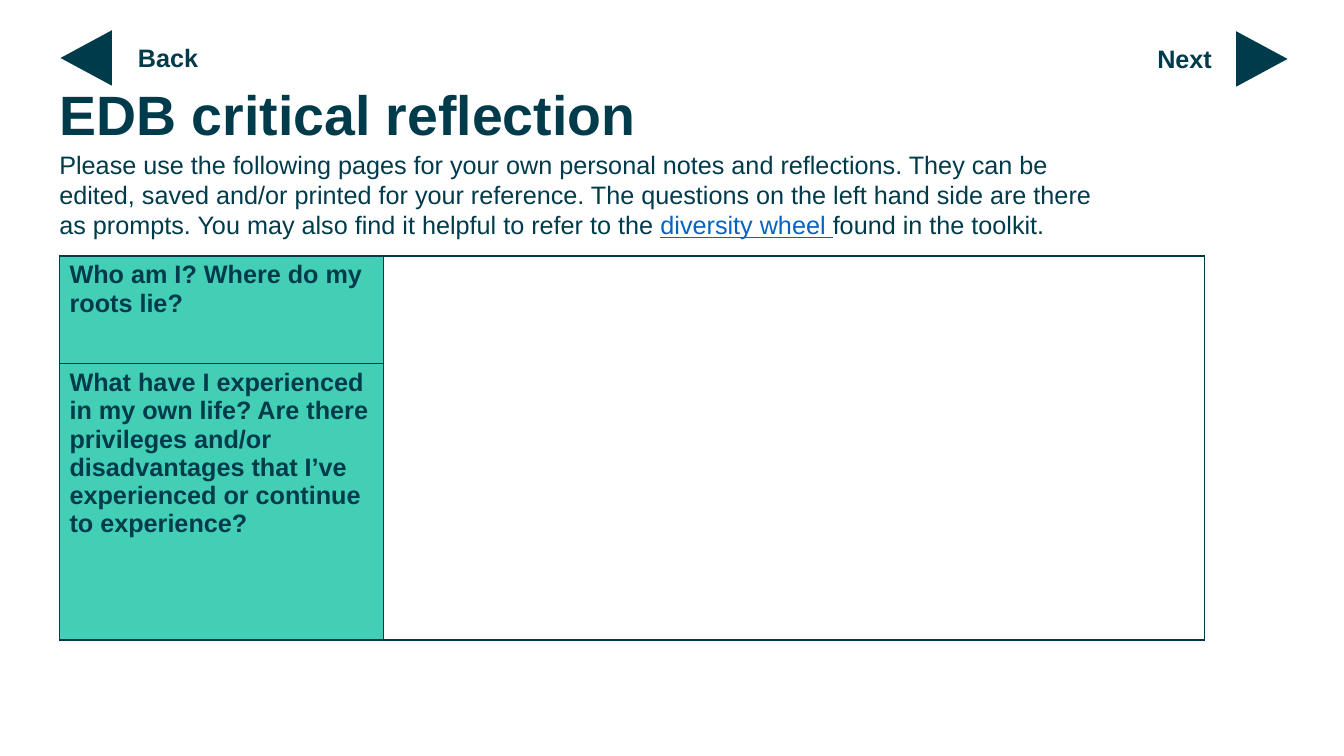
from lxml.etree import SubElement
from pptx import Presentation
from pptx.dml.color import RGBColor
from pptx.enum.shapes import MSO_SHAPE
from pptx.enum.text import MSO_ANCHOR, PP_ALIGN
from pptx.oxml.ns import qn
from pptx.util import Inches, Pt

NAVY = RGBColor(0x00, 0x3B, 0x4C)
TEAL = RGBColor(0x43, 0xCF, 0xB5)
WHITE = RGBColor(0xFF, 0xFF, 0xFF)
BLUE = RGBColor(0x05, 0x63, 0xC1)

BODY = {"name": "Arial", "size": Pt(18), "bold": False}
BOLD = {**BODY, "bold": True}
TITLE = {**BOLD, "size": Pt(39.6)}

INTRO = [
    ("Please use the following pages for your own personal notes and "
     "reflections. They can be edited, saved and/or printed for your "
     "reference. The questions on the left hand side are there as prompts. "
     "You may also find it helpful to refer to the ", NAVY, False),
    ("diversity wheel ", BLUE, True),
    ("found in the toolkit.", NAVY, False),
]
PROMPTS = [
    ("Who am I? Where do my roots lie?", 1.07),
    ("What have I experienced in my own life? Are there privileges and/or "
     "disadvantages that I’ve experienced or continue to experience?", 2.74),
]


def add_run(para, text, style, color=NAVY):
    run = para.add_run()
    run.text = text
    for name, value in style.items():
        setattr(run.font, name, value)
    run.font.color.rgb = color
    return run


def add_box(slide, *box):
    frame = slide.shapes.add_textbox(*map(Inches, box)).text_frame
    frame.word_wrap = True
    return frame.paragraphs[0]


def add_title(slide, text, *box):
    title = slide.shapes.title
    title.left, title.top, title.width, title.height = map(Inches, box)
    frame = title.text_frame
    for side in ("left", "top", "right", "bottom"):
        setattr(frame, f"margin_{side}", 0)
    frame.vertical_anchor = MSO_ANCHOR.TOP
    para = frame.paragraphs[0]
    para.alignment = PP_ALIGN.LEFT
    para.line_spacing = 0.9
    add_run(para, text, TITLE)


def add_intro(slide, *box):
    para = add_box(slide, *box)
    for text, color, under in INTRO:
        add_run(para, text, {**BODY, "underline": under}, color)


def add_nav(slide, label, left, top, turn, gap):
    """Place an arrow at left, top and its label at the given gap from it."""
    arrow = slide.shapes.add_shape(
        MSO_SHAPE.ISOSCELES_TRIANGLE,
        *map(Inches, (left, top, 0.55, 0.51)))
    arrow.rotation = turn
    arrow.shadow.inherit = False
    arrow.fill.solid()
    arrow.fill.fore_color.rgb = NAVY
    arrow.line.fill.background()
    add_run(add_box(slide, left + gap, top + 0.05, 0.84, 0.4), label, BOLD)


def style_cell(cell, color):
    props = cell._tc.get_or_add_tcPr()
    for side in ("lnL", "lnR", "lnT", "lnB"):
        line = SubElement(props, qn(f"a:{side}"), w=str(Pt(1)))
        fill = SubElement(line, qn("a:solidFill"))
        SubElement(fill, qn("a:srgbClr"), val=str(NAVY))
    cell.fill.solid()
    cell.fill.fore_color.rgb = color


def add_notes(slide, left, top, width, height):
    """Add the table of prompts, with one tall cell for the answers."""
    table = slide.shapes.add_table(
        len(PROMPTS), 2, *map(Inches, (left, top, width, height))).table
    table.first_row = table.horz_banding = False
    table.columns[0].width = Inches(3.21)
    table.columns[1].width = Inches(width - 3.21)
    for row, (text, tall) in enumerate(PROMPTS):
        table.rows[row].height = Inches(tall)
        prompt = table.cell(row, 0)
        add_run(prompt.text_frame.paragraphs[0], text, BOLD)
        style_cell(prompt, TEAL)
        style_cell(table.cell(row, 1), WHITE)
    table.cell(0, 1).merge(table.cell(len(PROMPTS) - 1, 1))


def main():
    deck = Presentation()
    deck.slide_width, deck.slide_height = Inches(13.33), Inches(7.5)
    slide = deck.slides.add_slide(deck.slide_layouts[5])
    add_title(slide, "EDB critical reflection", 0.59, 0.87, 11.22, 0.79)
    add_notes(slide, 0.59, 2.54, 11.36, 3.81)
    add_intro(slide, 0.49, 1.43, 10.72, 1.01)
    add_nav(slide, "Next", 12.24, 0.33, 90, -0.86)
    add_nav(slide, "Back", 0.58, 0.32, 270, 0.69)
    deck.save("out.pptx")


if __name__ == "__main__":
    main()
